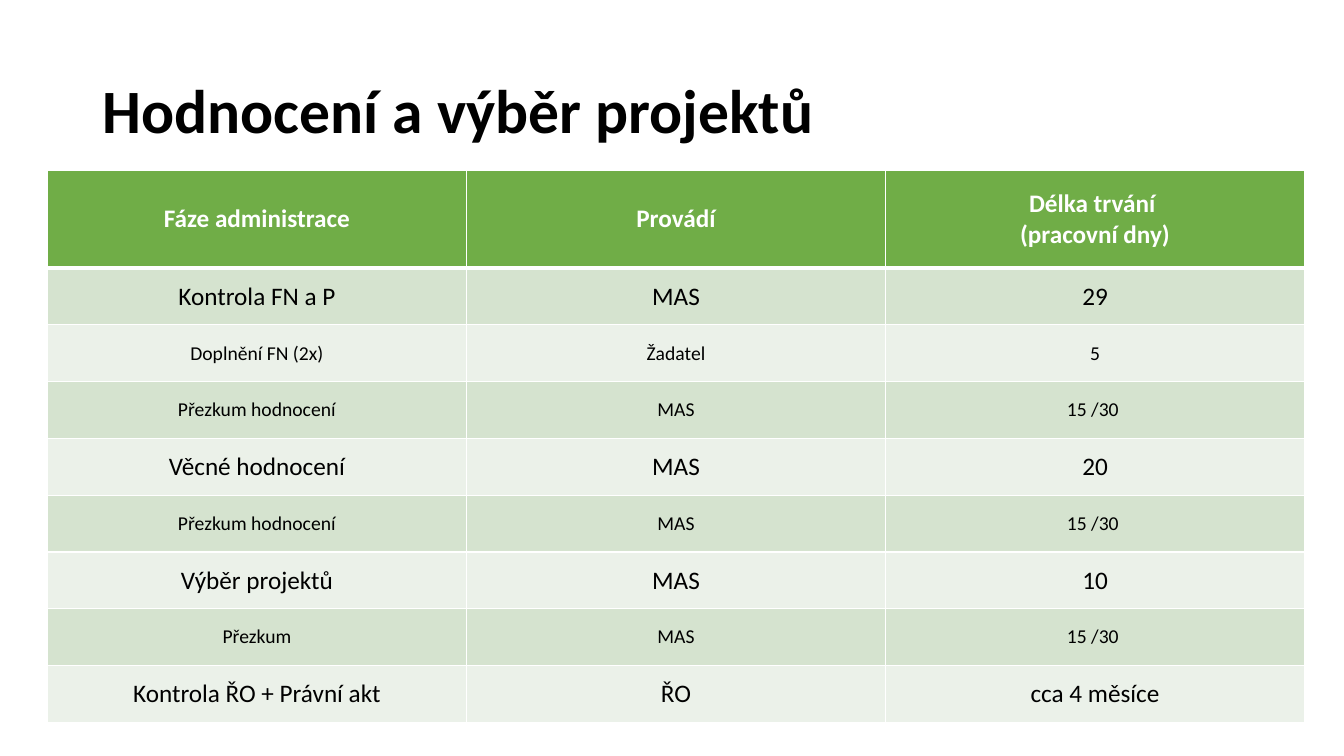
from lxml import etree
from pptx import Presentation
from pptx.dml.color import RGBColor
from pptx.enum.text import MSO_ANCHOR, PP_ALIGN
from pptx.oxml.ns import qn
from pptx.util import Inches, Pt

MIDDLE = MSO_ANCHOR.MIDDLE
LEFT, CENTER = PP_ALIGN.LEFT, PP_ALIGN.CENTER

BLACK = RGBColor(0x00, 0x00, 0x00)
WHITE = RGBColor(0xFF, 0xFF, 0xFF)
HEADER_GREEN = RGBColor(0x70, 0xAD, 0x47)
BAND_GREENS = (RGBColor(0xD5, 0xE3, 0xCF), RGBColor(0xEB, 0xF1, 0xE9))

FONT = "Calibri"
PHASE_SIZE, STEP_SIZE = 18, 14

HEADINGS = ("Fáze administrace", "Provádí", "Délka trvání \n(pracovní dny)")
# Text size of the row, then phase, who carries it out, and duration
PHASES = (
    (PHASE_SIZE, "Kontrola FN a P", "MAS", "29"),
    (STEP_SIZE, "Doplnění FN (2x)", "Žadatel", "5"),
    (STEP_SIZE, "Přezkum hodnocení", "MAS", "15 /30 "),
    (PHASE_SIZE, "Věcné hodnocení", "MAS", "20"),
    (STEP_SIZE, "Přezkum hodnocení", "MAS", "15 /30 "),
    (PHASE_SIZE, "Výběr projektů", "MAS", "10"),
    (STEP_SIZE, "Přezkum", "MAS", "15 /30 "),
    (PHASE_SIZE, "Kontrola ŘO + Právní akt", "ŘO", "cca 4 měsíce"),
)


def write_text(frame, text, size=PHASE_SIZE, color=BLACK, bold=False,
               align=CENTER, spacing=1.0):
    frame.text = text
    for paragraph in frame.paragraphs:
        paragraph.alignment = align
        paragraph.line_spacing = spacing
        for run in paragraph.runs:
            run.font.name = FONT
            run.font.size = Pt(size)
            run.font.bold = bold
            run.font.color.rgb = color


def set_borders(cell, top=1, bottom=1):
    properties = cell._tc.get_or_add_tcPr()
    for side, width in (("L", 1), ("R", 1), ("T", top), ("B", bottom)):
        line = etree.SubElement(properties, qn(f"a:ln{side}"), w=str(Pt(width)))
        fill = etree.SubElement(line, qn("a:solidFill"))
        etree.SubElement(fill, qn("a:srgbClr"), val=str(WHITE))


def fill_row(row, texts, background, top=1, bottom=1, **text_format):
    for cell, text in zip(row.cells, texts):
        set_borders(cell, top, bottom)
        cell.fill.solid()
        cell.fill.fore_color.rgb = background
        cell.vertical_anchor = MIDDLE
        write_text(cell.text_frame, text, **text_format)


def add_title(slide, text):
    title = slide.shapes.title
    title.left, title.top = Inches(0.92), Inches(0.4)
    title.width, title.height = Inches(11.5), Inches(1.45)
    title.text_frame.vertical_anchor = MIDDLE
    write_text(title.text_frame, text, size=44, bold=True, align=LEFT, spacing=0.9)


def add_phase_table(slide):
    table = slide.shapes.add_table(
        len(PHASES) + 1, len(HEADINGS),
        Inches(0.47), Inches(1.69), Inches(12.47), Inches(5.48)).table
    header, *phase_rows = table.rows

    # Header row
    header.height = Inches(0.97)
    fill_row(header, HEADINGS, HEADER_GREEN, bottom=3, color=WHITE, bold=True)

    # Banded phase rows
    for index, (row, (size, *texts)) in enumerate(zip(phase_rows, PHASES)):
        row.height = Inches((5.48 - 0.97) / len(PHASES))
        fill_row(row, texts, BAND_GREENS[index % 2],
                 top=1 if index else 3, size=size)


def main():
    presentation = Presentation()
    presentation.slide_width = Inches(13.33)
    presentation.slide_height = Inches(7.5)
    title_only = presentation.slide_layouts[5]
    slide = presentation.slides.add_slide(title_only)
    add_title(slide, "Hodnocení a výběr projektů")
    add_phase_table(slide)
    presentation.save("out.pptx")


if __name__ == "__main__":
    main()
